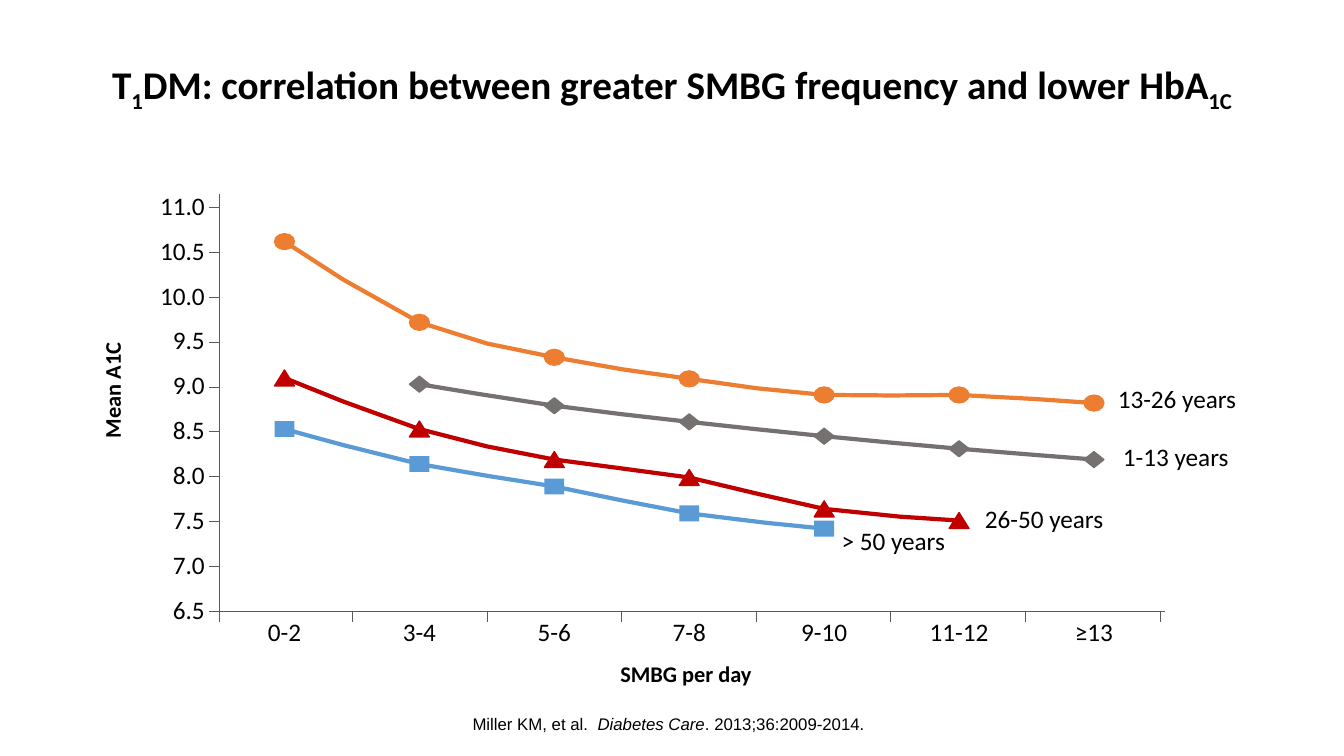
"""Build the slide that relates SMBG frequency to mean A1C by age group."""
from dataclasses import dataclass

from lxml import etree
from pptx import Presentation
from pptx import util as u
from pptx.dml.color import RGBColor
from pptx.enum import shapes, text
from pptx.oxml import ns


@dataclass(frozen=True)
class Theme:
    """Colours, fonts and type sizes of the slide."""
    ink: str = "000000"
    axis: str = "595959"
    orange: str = "ED7D31"
    grey: str = "767171"
    red: str = "C00000"
    blue: str = "5B9BD5"
    body: str = "Calibri"
    source: str = "Arial"
    title_size: int = 28
    label_size: int = 18
    axis_size: int = 16
    source_size: int = 12


@dataclass(frozen=True)
class Series:
    """One age group: marker, first category, values and label corner."""
    name: str
    colour: str
    marker: int
    first: int
    values: tuple
    label_at: tuple
    outlined: bool = True


THEME = Theme()
MARK = shapes.MSO_SHAPE
ALIGN = text.PP_ALIGN
LEFT, BASE, TOP, RIGHT = 5.54, 15.4, 4.9, 29.36
FIRST_TICK, TICK_STEP, TICK = 8.89, 3.39, 0.27
FIRST_CENTRE, CENTRE_STEP, UNIT = 7.17, 3.4, 2.26
LOW, HIGH = 6.5, 11.0
MARK_WIDTH, MARK_HEIGHT = 0.5, 0.4
LABEL_WIDTH, LABEL_HEIGHT = 2.54, 1.12
CATEGORIES = ("0-2", "3-4", "5-6", "7-8", "9-10", "11-12", "≥13")
GROUPS = (
    Series("> 50 years", THEME.blue, MARK.RECTANGLE, 0,
           (8.53, 8.14, 7.89, 7.59, 7.42), (21.21, 13.25), False),
    Series("26-50 years", THEME.red, MARK.ISOSCELES_TRIANGLE, 0,
           (9.1, 8.53, 8.19, 7.99, 7.64, 7.51), (24.82, 12.69)),
    Series("1-13 years", THEME.grey, MARK.DIAMOND, 1,
           (9.03, 8.79, 8.61, 8.45, 8.31, 8.19), (28.3, 11.13)),
    Series("13-26 years", THEME.orange, MARK.OVAL, 0,
           (10.62, 9.72, 9.33, 9.09, 8.91, 8.91, 8.82), (28.17, 9.65)),
)


def set_all(target, values):
    """Set each attribute of target named in values."""
    for name, value in values.items():
        setattr(target, name, value)


def add_text(page, place, spans, size, align=ALIGN.CENTER, font=THEME.body,
             bold=False, frame=None, para_format=None):
    """Add a one-paragraph text box; spans pair text with format values."""
    box = page.shapes.add_textbox(*map(u.Cm, place))
    set_all(box.text_frame, {"word_wrap": True,
                             "auto_size": text.MSO_AUTO_SIZE.SHAPE_TO_FIT_TEXT,
                             **(frame or {})})
    para = box.text_frame.paragraphs[0]
    set_all(para, {"alignment": align, **(para_format or {})})
    for words, extra in spans:
        span = para.add_run()
        span.text = words
        set_all(span.font, {"name": font, "size": u.Pt(size), "bold": bold,
                            "italic": extra.get("italic", False)})
        span.font.color.rgb = RGBColor.from_string(THEME.ink)
        if "baseline" in extra:
            span._r.get_or_add_rPr().set("baseline", extra["baseline"])
    return box


def style_line(line, colour, width):
    """Give a line its colour and its width in points."""
    line.color.rgb = RGBColor.from_string(colour)
    line.width = u.Pt(width)


def add_axis_line(page, *ends):
    """Add a thin straight line without a shadow."""
    line = page.shapes.add_connector(shapes.MSO_CONNECTOR.STRAIGHT, *map(u.Cm, ends))
    style_line(line.line, THEME.axis, 0.5)
    etree.SubElement(line._element.spPr, ns.qn("a:effectLst"))


def category_x(index):
    """Return the centre of a category in centimetres."""
    return FIRST_CENTRE + CENTRE_STEP * index


def value_y(value):
    """Return the height of a value on the slide in centimetres."""
    return BASE - (value - LOW) * UNIT


def smooth(points):
    """Return the points with a Catmull-Rom midpoint between each two."""
    padded = [points[0], *points, points[-1]]
    curve = [points[0]]
    for a, b, c, d in zip(padded, padded[1:], padded[2:], padded[3:]):
        middle = tuple((9 * (q + r) - p - s) / 16 for p, q, r, s in zip(a, b, c, d))
        curve += [middle, c]
    return curve


def add_curve(page, points, colour):
    """Add a smooth open line through the points."""
    start, *rest = [tuple(map(u.Cm, point)) for point in smooth(points)]
    builder = page.shapes.build_freeform(*start)
    builder.add_line_segments(rest, close=False)
    curve = builder.convert_to_shape()
    curve.shadow.inherit = False
    curve.fill.background()
    style_line(curve.line, colour, 3)


def add_marker(page, group, point):
    """Add a marker of the group centred on a point."""
    x, y = point
    place = (x - MARK_WIDTH / 2, y - MARK_HEIGHT / 2, MARK_WIDTH, MARK_HEIGHT)
    marker = page.shapes.add_shape(group.marker, *map(u.Cm, place))
    marker.shadow.inherit = False
    marker.fill.solid()
    marker.fill.fore_color.rgb = RGBColor.from_string(group.colour)
    if group.outlined:
        style_line(marker.line, group.colour, 1)
    else:
        marker.line.fill.background()


def add_series(page, group):
    """Add the curve, markers and label of an age group."""
    points = [(category_x(index), value_y(value))
              for index, value in enumerate(group.values, group.first)]
    add_curve(page, points, group.colour)
    for point in points:
        add_marker(page, group, point)
    margins = {f"margin_{side}": 0 for side in ("left", "top", "right", "bottom")}
    add_text(page, (*group.label_at, 3.02, 0.76), [(group.name, {})],
             THEME.label_size, ALIGN.LEFT, frame={"word_wrap": False, **margins})


def add_axes(page):
    """Add both axes with their ticks, labels and titles."""
    add_axis_line(page, LEFT, TOP, LEFT, BASE + TICK)
    add_axis_line(page, LEFT - TICK, BASE, RIGHT, BASE)
    for index, name in enumerate(CATEGORIES):
        tick_x = FIRST_TICK + TICK_STEP * index
        add_axis_line(page, tick_x, BASE, tick_x, BASE + TICK)
        place = (category_x(index) - LABEL_WIDTH / 2, BASE, LABEL_WIDTH, LABEL_HEIGHT)
        add_text(page, place, [(name, {})], THEME.label_size)
    for index in range(int((HIGH - LOW) * 2) + 1):
        value = LOW + index / 2
        y = value_y(value)
        if index:
            add_axis_line(page, LEFT - TICK, y, LEFT, y)
        add_text(page, (2.87, y - LABEL_HEIGHT / 2, LABEL_WIDTH, LABEL_HEIGHT),
                 [(f"{value:.1f}", {})], THEME.label_size, ALIGN.RIGHT)
    add_text(page, (11.56, 16.51, 11.46, 1.02), [("SMBG per day", {})],
             THEME.axis_size, bold=True)
    title = add_text(page, (-1.83, 9.37, 9.32, 0.94), [("Mean A1C", {})],
                     THEME.axis_size, bold=True)
    title.rotation = 270


def main():
    """Build and save the deck."""
    deck = Presentation()
    set_all(deck, {"slide_width": u.Cm(33.87), "slide_height": u.Cm(19.05)})
    page = deck.slides.add_slide(deck.slide_layouts[6])
    low = {"baseline": "-25000"}
    add_text(page, (0, 1.4, 33.87, 1.45),
             [("T", {}), ("1", low),
              ("DM: correlation between greater SMBG frequency and lower HbA", {}),
              ("1C", low)], THEME.title_size, bold=True)
    add_axes(page)
    for group in GROUPS:
        add_series(page, group)
    add_text(page, (0.38, 17.93, 32.94, 0.69),
             [("Miller KM, et al.  ", {}), ("Diabetes Care", {"italic": True}),
              (". 2013;36:2009-2014.", {})], THEME.source_size, font=THEME.source,
             frame={"vertical_anchor": text.MSO_ANCHOR.BOTTOM},
             para_format={"line_spacing": 0.85})
    deck.save("out.pptx")


if __name__ == "__main__":
    main()
